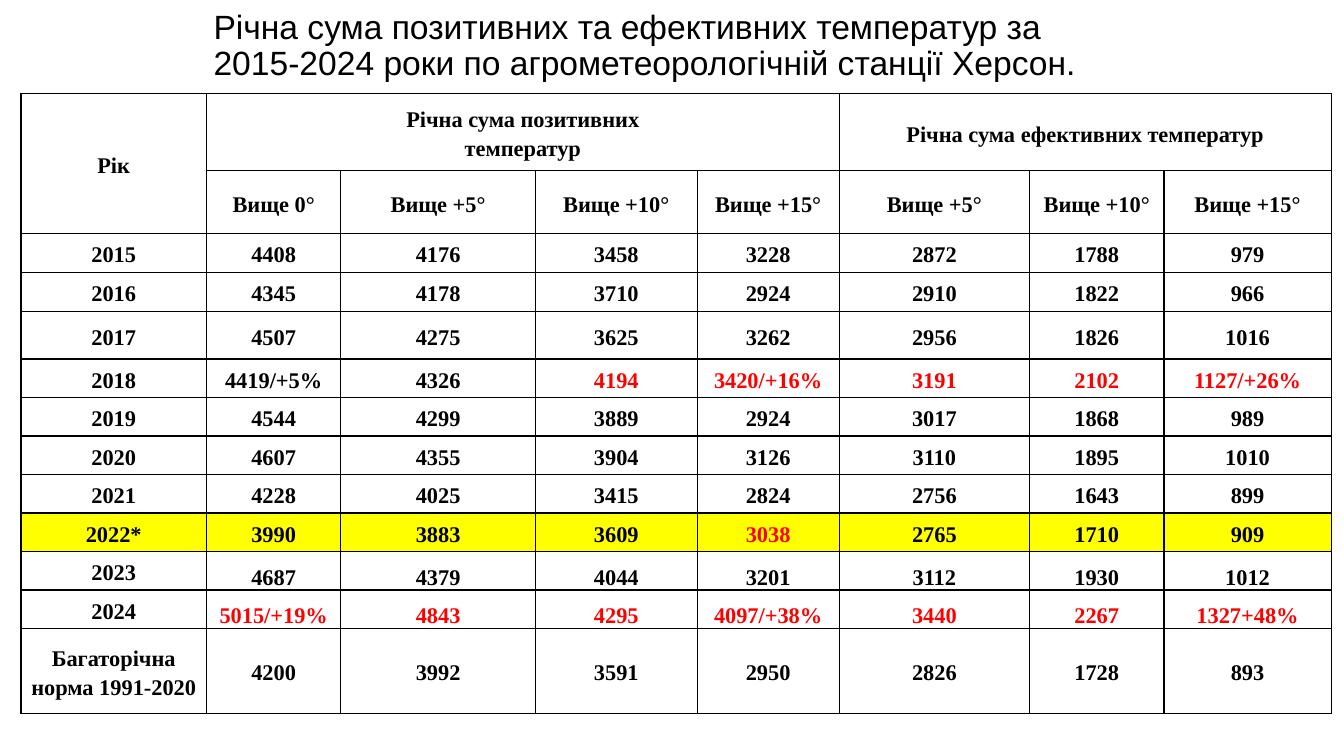
import pptx
import pptx.util
import pptx.dml.color
import pptx.enum.text
import pptx.oxml
import pptx.oxml.ns

Pt = pptx.util.Pt
ALIGN = pptx.enum.text.PP_ALIGN
ANCHOR = pptx.enum.text.MSO_ANCHOR

TITLE = ("Річна сума позитивних та ефективних температур за "
         "2015-2024 роки по агрометеорологічній станції Херсон.")
HEADS = [
    ["Рік", "Річна сума позитивних\nтемператур", "", "", "",
     "Річна сума ефективних температур", "", ""],
    ["", "Вище 0°", "Вище +5°", "Вище +10°", "Вище +15°",
     "Вище +5°", "Вище +10°", "Вище +15°"],
]
YEARS = [
    ["2015", "4408", "4176", "3458", "3228", "2872", "1788", "979"],
    ["2016", "4345", "4178", "3710", "2924", "2910", "1822", "966"],
    ["2017", "4507", "4275", "3625", "3262", "2956", "1826", "1016"],
    ["2018", "4419/+5%", "4326", "4194", "3420/+16%", "3191", "2102", "1127/+26%"],
    ["2019", "4544", "4299", "3889", "2924", "3017", "1868", "989"],
    ["2020", "4607", "4355", "3904", "3126", "3110", "1895", "1010"],
    ["2021", "4228", "4025", "3415", "2824", "2756", "1643", "899"],
    ["2022*", "3990", "3883", "3609", "3038", "2765", "1710", "909"],
    ["2023", "4687", "4379", "4044", "3201", "3112", "1930", "1012"],
    ["2024", "5015/+19%", "4843", "4295", "4097/+38%", "3440", "2267", "1327+48%"],
    ["Багаторічна норма 1991-2020", "4200", "3992", "3591", "2950", "2826", "1728", "893"],
]
WIDTHS = [132.5, 96, 139, 115.5, 101.5, 136, 96, 119.5]
HEIGHTS = [55, 45, 27.5, 28, 34] + [27.5] * 7 + [60.5]
SPANS = [(0, 0, 1, 0), (0, 1, 0, 4), (0, 5, 0, 7)]
RED = {"2018": range(3, 8), "2022*": [4], "2024": range(1, 8)}
YELLOW = ["2022*"]
LOW = ["2023", "2024"]


def color(text):
    return pptx.dml.color.RGBColor.from_string(text)


class Board:
    ink, paper, alert, mark = "000000", "FFFFFF", "FF0000", "FFFF00"

    def __init__(self, slide):
        self.slide = slide

    def style(self, para, face, size, tint, bold=False):
        font = para.font
        font.name, font.size, font.bold = face, Pt(size), bold
        font.color.rgb = color(tint)

    def title(self, text, left, top, width, height):
        box = self.slide.shapes.add_textbox(Pt(left), Pt(top), Pt(width), Pt(height))
        frame = box.text_frame
        frame.word_wrap = True
        frame.vertical_anchor = ANCHOR.MIDDLE
        frame.text = text
        para = frame.paragraphs[0]
        para.line_spacing = 0.9
        self.style(para, "Arial", 24, self.ink)

    def border(self, cell):
        props = cell._tc.get_or_add_tcPr()
        for side in ("lnL", "lnR", "lnT", "lnB"):
            props.append(pptx.oxml.parse_xml(
                f'<a:{side} {pptx.oxml.ns.nsdecls("a")} w="{Pt(1)}"><a:solidFill>'
                f'<a:srgbClr val="{self.ink}"/></a:solidFill></a:{side}>'))

    def cell(self, cell, text, tint, fill, low):
        self.border(cell)
        cell.fill.solid()
        cell.fill.fore_color.rgb = color(fill)
        cell.margin_left = cell.margin_right = Pt(0.7 if low else 4.3)
        cell.margin_top, cell.margin_bottom = Pt(0.7), 0
        cell.vertical_anchor = ANCHOR.BOTTOM if low else ANCHOR.MIDDLE
        cell.text_frame.text = text
        for para in cell.text_frame.paragraphs:
            para.alignment = ALIGN.CENTER
            para.line_spacing = 1.0 if low else 1.15
            self.style(para, "Times New Roman", 16, tint, True)

    def table(self, rows, left, top):
        table = self.slide.shapes.add_table(
            len(rows), len(WIDTHS), Pt(left), Pt(top),
            Pt(sum(WIDTHS)), Pt(sum(HEIGHTS))).table
        table.first_row = table.horz_banding = False
        for col, width in zip(table.columns, WIDTHS):
            col.width = Pt(width)
        for row, height in zip(table.rows, HEIGHTS):
            row.height = Pt(height)
        for r, row in enumerate(rows):
            year = row[0]
            fill = self.mark if year in YELLOW else self.paper
            for c, text in enumerate(row):
                tint = self.alert if c in RED.get(year, []) else self.ink
                self.cell(table.cell(r, c), text, tint, fill, year in LOW and c > 0)
        for r, c, down, right in SPANS:
            table.cell(r, c).merge(table.cell(down, right))


def main():
    deck = pptx.Presentation()
    deck.slide_width, deck.slide_height = Pt(960), Pt(540)
    board = Board(deck.slides.add_slide(deck.slide_layouts[6]))
    board.title(TITLE, 145.5, 0, 648, 67)
    board.table(HEADS + YEARS, 15, 67)
    deck.save("out.pptx")


if __name__ == "__main__":
    main()
